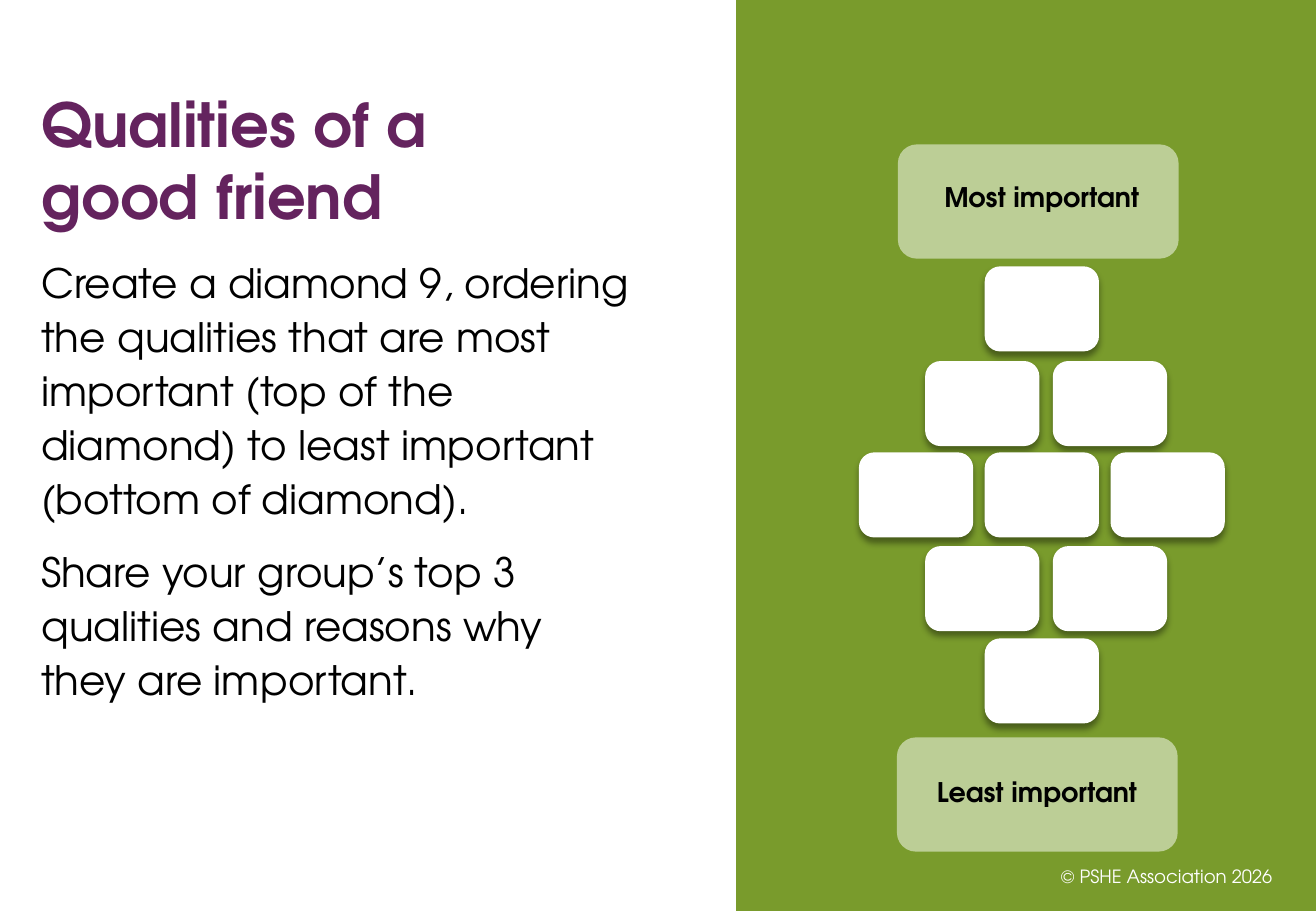
from dataclasses import dataclass

from lxml.etree import SubElement
from pptx import Presentation
from pptx.dml.color import RGBColor
from pptx.enum.shapes import MSO_SHAPE as Preset
from pptx.enum.text import MSO_ANCHOR as Anchor, PP_ALIGN as Align
from pptx.oxml.ns import qn
from pptx.shapes.autoshape import Shape
from pptx.slide import Slide
from pptx.util import Cm, Pt


@dataclass(frozen=True)
class Theme:
    font: str = "TeX Gyre Adventor"
    green: str = "799B2C"
    pale_green: str = "BCCE96"
    purple: str = "64235E"
    black: str = "000000"
    white: str = "FFFFFF"
    title_size: float = 36
    body_size: float = 24
    label_size: float = 16
    footer_size: float = 10.8


@dataclass(frozen=True)
class Box:
    left: float
    top: float
    width: float
    height: float

    def lengths(self) -> tuple[Cm, Cm, Cm, Cm]:
        return Cm(self.left), Cm(self.top), Cm(self.width), Cm(self.height)


@dataclass(frozen=True)
class TextBlock:
    box: Box
    paragraphs: tuple[str, ...]
    size: float
    color: str
    bold: bool = False
    align: Align = Align.LEFT
    anchor: Anchor = Anchor.TOP
    line_points: float | None = None
    gap_points: float = 0


@dataclass(frozen=True)
class DiamondRow:
    center: float
    top: float
    cards: int
    pitch: float = 0


@dataclass(frozen=True)
class RankLabel:
    panel: Box
    caption: str
    caption_left: float
    caption_top: float


THEME = Theme()
SLIDE_WIDTH, SLIDE_HEIGHT = 27.51, 19.05
PANEL_LEFT = 15.39
CARD_WIDTH, CARD_HEIGHT = 2.31, 1.7

COPY_BLOCKS = (
    TextBlock(
        Box(0.61, 5.16, 12.9, 12.14),
        (
            "Create a diamond 9, ordering the qualities that are most important "
            "(top of the diamond) to least important (bottom of diamond).",
            "Share your group’s top 3 qualities and reasons why they are important.",
        ),
        THEME.body_size, THEME.black, line_points=32, gap_points=11,
    ),
    TextBlock(
        Box(0.61, 3.05, 11.58, 1.93), ("Qualities of a good friend",),
        THEME.title_size, THEME.purple, bold=True, anchor=Anchor.BOTTOM, line_points=43,
    ),
    TextBlock(
        Box(20.65, 17.81, 6.2, 1.02), ("© PSHE Association 2026",),
        THEME.footer_size, THEME.white, align=Align.RIGHT, anchor=Anchor.MIDDLE,
    ),
)
DIAMOND = (
    DiamondRow(21.78, 5.61, 1),
    DiamondRow(21.87, 7.59, 2, 2.67),
    DiamondRow(21.78, 9.5, 3, 2.63),
    DiamondRow(21.87, 11.46, 2, 2.67),
    DiamondRow(21.78, 13.39, 1),
)
RANK_LABELS = (
    RankLabel(Box(18.77, 3.02, 5.87, 2.39), "Most important", 17.83, 3.66),
    RankLabel(Box(18.75, 15.42, 5.87, 2.39), "Least important", 17.73, 16.1),
)


def add_panel(slide: Slide, preset: Preset, box: Box, color: str) -> Shape:
    panel = slide.shapes.add_shape(preset, *box.lengths())
    panel.shadow.inherit = False
    panel.fill.solid()
    panel.fill.fore_color.rgb = RGBColor.from_string(color)
    panel.line.fill.background()
    return panel


def add_text(slide: Slide, block: TextBlock) -> None:
    frame = slide.shapes.add_textbox(*block.box.lengths()).text_frame
    frame.word_wrap = True
    frame.vertical_anchor = block.anchor
    font_format = {"name": THEME.font, "size": Pt(block.size), "bold": block.bold}
    for index, wording in enumerate(block.paragraphs):
        paragraph = frame.add_paragraph() if index else frame.paragraphs[0]
        paragraph.text = wording
        paragraph.alignment = block.align
        if block.line_points:
            paragraph.line_spacing = Pt(block.line_points)
        if index:
            paragraph.space_before = Pt(block.gap_points)
        for attribute, value in font_format.items():
            setattr(paragraph.font, attribute, value)
        paragraph.font.color.rgb = RGBColor.from_string(block.color)


def add_card(slide: Slide, box: Box) -> None:
    """Add a blank white card with a soft shadow below it."""
    card = add_panel(slide, Preset.ROUNDED_RECTANGLE, box, THEME.white)
    card.line.color.rgb = RGBColor.from_string(THEME.white)
    card.line.width = Pt(2.25)
    effects = card._element.spPr.find(qn("a:effectLst"))
    shadow = SubElement(
        effects, qn("a:outerShdw"), blurRad=str(Pt(4)), dist=str(Pt(3)),
        dir="5400000", rotWithShape="0",
    )
    tint = SubElement(shadow, qn("a:srgbClr"), val=THEME.black)
    SubElement(tint, qn("a:alpha"), val="40000")


def add_diamond_row(slide: Slide, row: DiamondRow) -> None:
    first_left = row.center - (CARD_WIDTH + (row.cards - 1) * row.pitch) / 2
    for column in range(row.cards):
        left = first_left + column * row.pitch
        add_card(slide, Box(left, row.top, CARD_WIDTH, CARD_HEIGHT))


def add_rank_label(slide: Slide, label: RankLabel) -> None:
    add_panel(slide, Preset.ROUNDED_RECTANGLE, label.panel, THEME.pale_green)
    caption_box = Box(label.caption_left, label.caption_top, 7.9, 0.94)
    add_text(slide, TextBlock(
        caption_box, (label.caption,), THEME.label_size, THEME.black,
        bold=True, align=Align.CENTER,
    ))


def main() -> None:
    deck = Presentation()
    deck.slide_width, deck.slide_height = Cm(SLIDE_WIDTH), Cm(SLIDE_HEIGHT)
    slide = deck.slides.add_slide(deck.slide_layouts[6])
    side = Box(PANEL_LEFT, 0, SLIDE_WIDTH - PANEL_LEFT, SLIDE_HEIGHT)
    add_panel(slide, Preset.RECTANGLE, side, THEME.green)
    for block in COPY_BLOCKS:
        add_text(slide, block)
    for row in DIAMOND:
        add_diamond_row(slide, row)
    for label in RANK_LABELS:
        add_rank_label(slide, label)
    deck.save("out.pptx")


if __name__ == "__main__":
    main()
